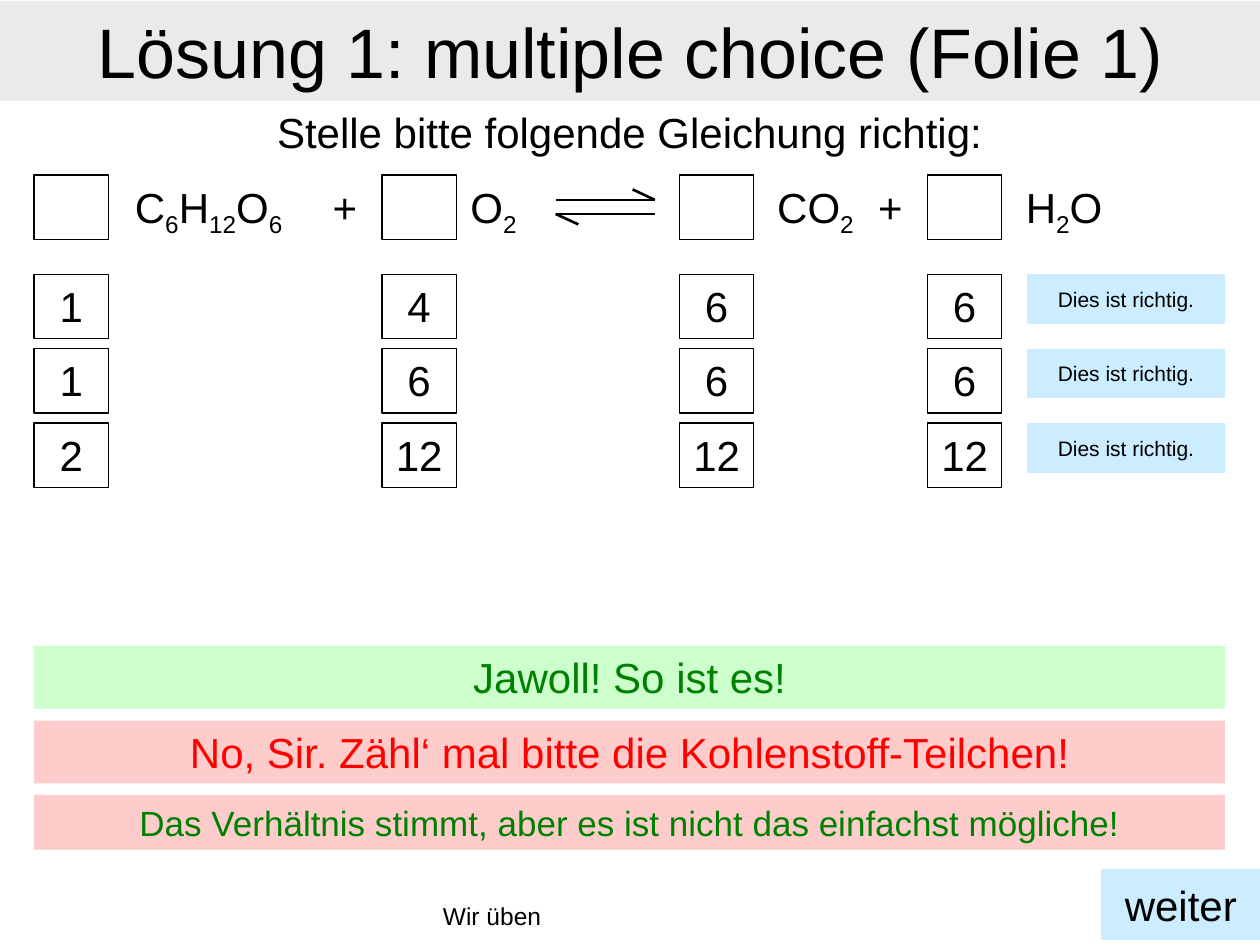
import pptx
import pptx.dml.color
import pptx.enum.shapes
import pptx.enum.text
import pptx.util
from lxml import etree

Pt = pptx.util.Pt
RGBColor = pptx.dml.color.RGBColor
MSO_SHAPE = pptx.enum.shapes.MSO_SHAPE
ANCHOR = pptx.enum.text.MSO_ANCHOR
ALIGN = pptx.enum.text.PP_ALIGN

BLACK = RGBColor(0x00, 0x00, 0x00)
GREY = RGBColor(0xEA, 0xEA, 0xEA)
GREEN = RGBColor(0x00, 0x80, 0x00)
RED = RGBColor(0xFF, 0x00, 0x00)
PALE_GREEN = RGBColor(0xCC, 0xFF, 0xCC)
PALE_RED = RGBColor(0xFF, 0xCC, 0xCC)
PALE_BLUE = RGBColor(0xCC, 0xEC, 0xFF)

presentation = pptx.Presentation()
presentation.slide_width = Pt(720)
presentation.slide_height = Pt(540)
slide = presentation.slides.add_slide(presentation.slide_layouts[6])


def write(shape, parts, size=24, color=BLACK, anchor=ANCHOR.TOP, align=ALIGN.CENTER):
    text_frame = shape.text_frame
    text_frame.word_wrap = True
    text_frame.vertical_anchor = anchor
    paragraph = text_frame.paragraphs[0]
    paragraph.alignment = align
    for part in parts:
        run = paragraph.add_run()
        run.text = part
        run.font.name = "Arial"
        run.font.size = Pt(size)
        run.font.color.rgb = color
        if len(parts) > 1 and part.isdigit():
            run.font._element.set("baseline", "-25000")


def add_box(left, top, width, height, fill=None, kind=MSO_SHAPE.RECTANGLE):
    shape = slide.shapes.add_shape(kind, Pt(left), Pt(top), Pt(width), Pt(height))
    shape.shadow.inherit = False
    if fill is None:
        shape.fill.background()
        shape.line.color.rgb = BLACK
        shape.line.width = Pt(0.75)
    else:
        shape.fill.solid()
        shape.fill.fore_color.rgb = fill
        shape.line.fill.background()
    return shape


title = add_box(0, 0.5, 720, 57, GREY)
write(title, ["Lösung 1: multiple choice (Folie 1)"], 40, anchor=ANCHOR.MIDDLE)

equation_top = 100
for left, top, width, height, parts in [
    (19.5, 57.5, 680.5, 36, ["Stelle bitte folgende Gleichung richtig:"]),
    (62.5, equation_top, 113.5, 36, ["C", "6", "H", "12", "O", "6"]),
    (175.75, equation_top, 42.5, 36, ["+"]),
    (260.75, equation_top, 42.5, 36, ["O", "2"]),
    (430.5, equation_top, 71, 36, ["CO", "2"]),
    (487.5, equation_top, 42.5, 36, ["+"]),
    (572.5, equation_top, 71, 36, ["H", "2", "O"]),
]:
    text_box = slide.shapes.add_textbox(Pt(left), Pt(top), Pt(width), Pt(height))
    write(text_box, parts)

equilibrium_arrow = slide.shapes.add_group_shape()
for start_x, start_y, end_x, end_y in [
    (317.5, 114.25, 374.25, 114.25),
    (374.25, 114.25, 361.5, 108.25),
    (374.25, 122.25, 317.5, 122.25),
    (317.5, 122.25, 330.5, 128.25),
]:
    line = equilibrium_arrow.shapes.add_connector(
        pptx.enum.shapes.MSO_CONNECTOR.STRAIGHT,
        Pt(start_x), Pt(start_y), Pt(end_x), Pt(end_y),
    )
    line.line.color.rgb = BLACK
    line.line.width = Pt(1.5)
    etree.SubElement(line._element.spPr, pptx.oxml.ns.qn("a:effectLst"))

column_lefts = [19.5, 218.25, 388.25, 530]
answers = [(1, 4, 6, 6), (1, 6, 6, 6), (2, 12, 12, 12)]
for left in column_lefts:
    add_box(left, equation_top, 42.5, 36.75)

for row, coefficients in enumerate(answers):
    top = 156.75 + row * 42.5
    for left, coefficient in zip(column_lefts, coefficients):
        write(add_box(left, top, 42.5, 36.75), [str(coefficient)])
    button = add_box(586.75, top, 113.5, 28.25, PALE_BLUE, MSO_SHAPE.ACTION_BUTTON_CUSTOM)
    write(button, ["Dies ist richtig."], 12, anchor=ANCHOR.MIDDLE)

for top, height, fill, message, size, color in [
    (369, 36, PALE_GREEN, "Jawoll! So ist es!", 24, GREEN),
    (411.75, 36, PALE_RED, "No, Sir. Zähl‘ mal bitte die Kohlenstoff-Teilchen!", 24, RED),
    (454.25, 31.25, PALE_RED,
     "Das Verhältnis stimmt, aber es ist nicht das einfachst mögliche!", 20, GREEN),
]:
    write(add_box(19.5, top, 680.5, height, fill), [message], size, color)

next_button = add_box(629, 496.75, 91.5, 40.5, PALE_BLUE, MSO_SHAPE.ACTION_BUTTON_CUSTOM)
write(next_button, ["weiter"], anchor=ANCHOR.MIDDLE)

footer = slide.shapes.add_textbox(Pt(246), Pt(511.25), Pt(228), Pt(28))
write(footer, ["Wir üben"], 14, align=ALIGN.LEFT)

presentation.save("out.pptx")
